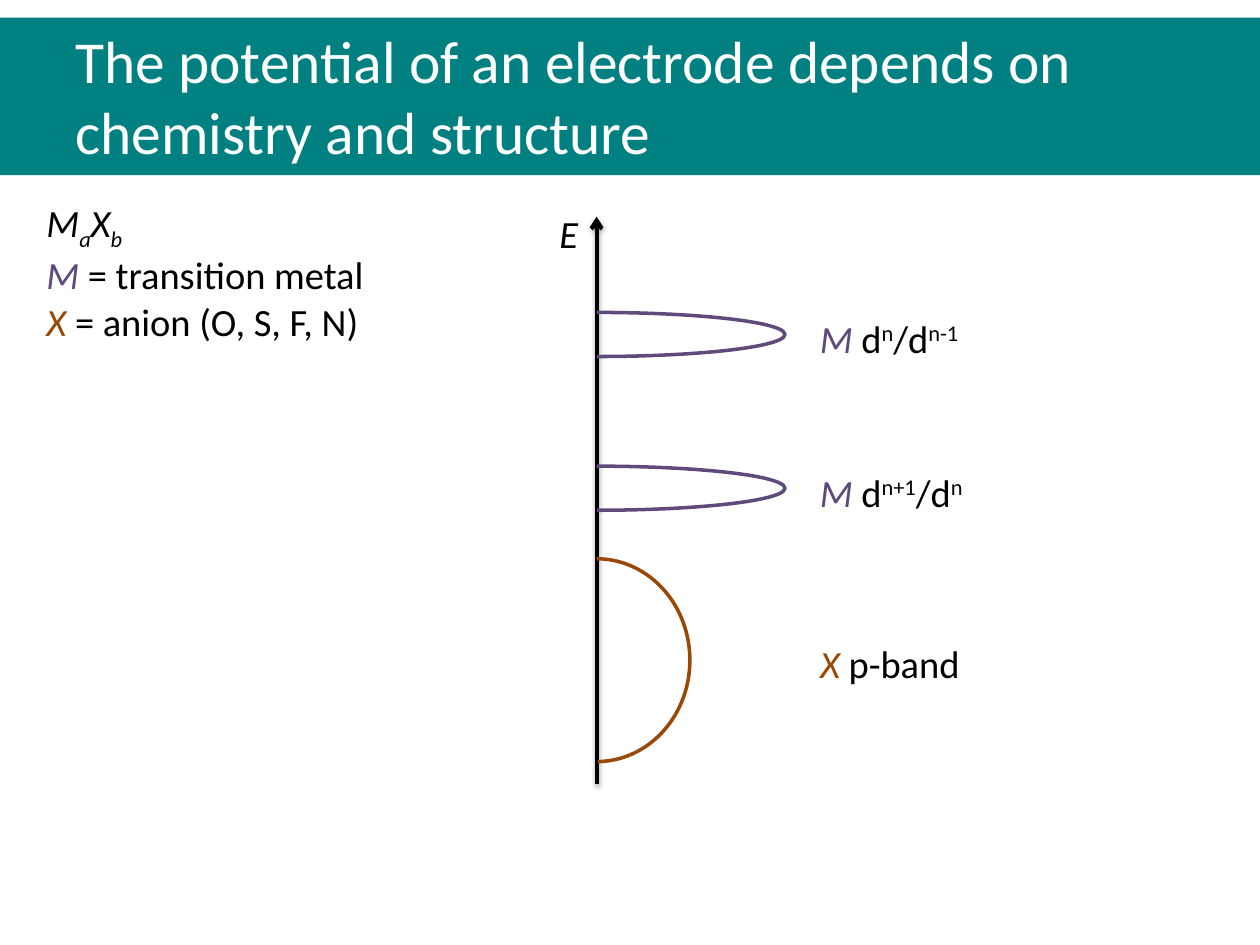
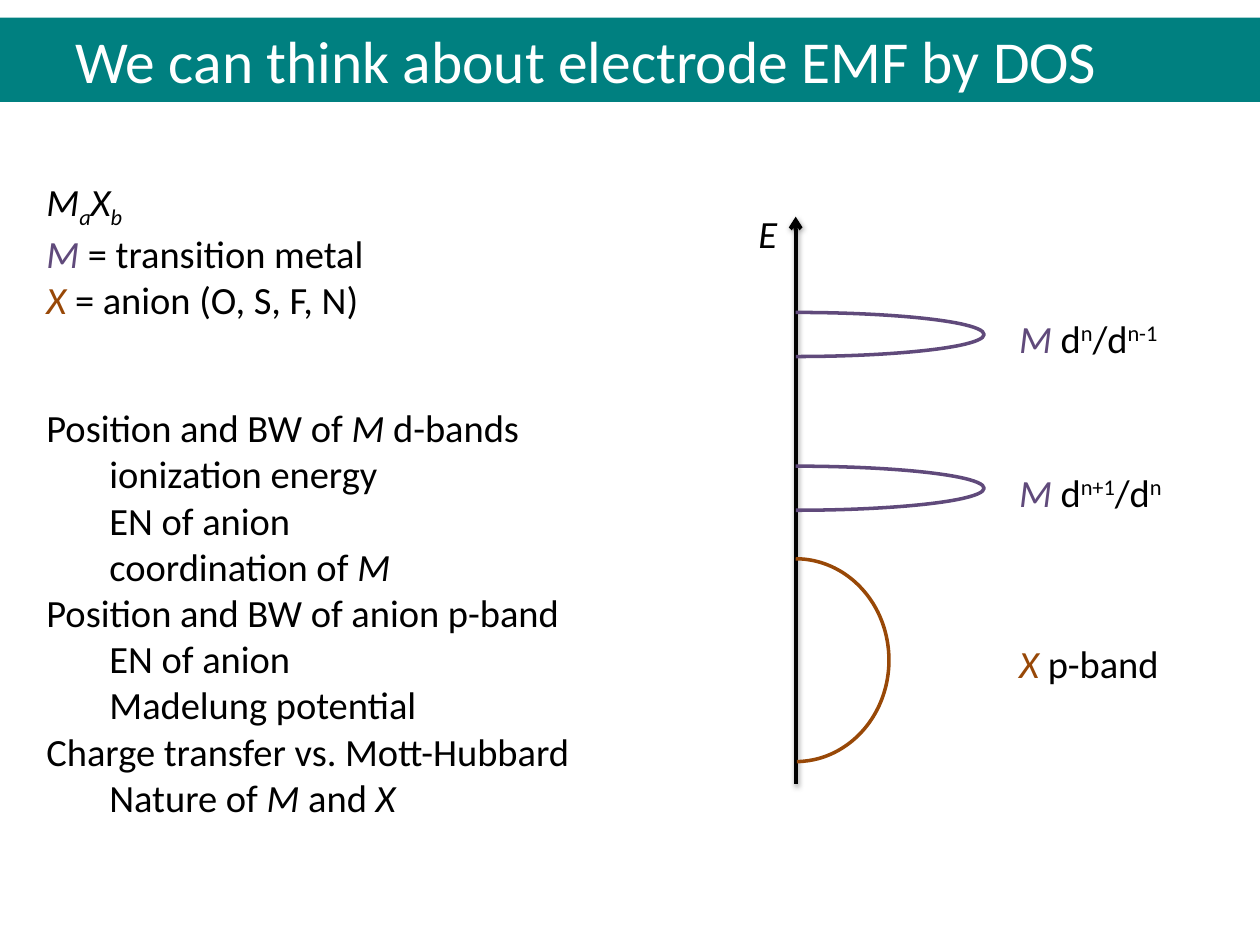
from dataclasses import dataclass

import pptx
import pptx.dml.color
import pptx.enum.shapes
import pptx.enum.text
import pptx.oxml
import pptx.oxml.ns
import pptx.presentation
import pptx.shapes.autoshape
import pptx.slide
import pptx.text.text
import pptx.util

RGBColor = pptx.dml.color.RGBColor
TEAL = RGBColor(0x00, 0x80, 0x80)
WHITE = RGBColor(0xFF, 0xFF, 0xFF)
BLACK = RGBColor(0x00, 0x00, 0x00)
METAL_PURPLE = RGBColor(0x60, 0x4A, 0x7B)
ANION_BROWN = RGBColor(0x98, 0x48, 0x07)

FONT = "Calibri"
TITLE_SIZE = 34
BODY_SIZE = 22

# The slide is a grid of 100 columns by 75 rows; every length below is in cells.
SLIDE_WIDTH = pptx.util.Inches(10)
SLIDE_HEIGHT = pptx.util.Inches(7.5)
COLUMNS, ROWS = 100, 75
INDENT = 5
TITLE_TOP = 1.4
LINE_HEIGHT = 4.7
TEXT_LEFT = 2.7
AXIS_TOP, AXIS_BOTTOM = 17.2, 62.2
LABEL_OFFSET = 16.75
SEMICIRCLE_START = 108.37

AXIS_SHADOW = (
    f'<a:effectLst {pptx.oxml.ns.nsdecls("a")}>'
    '<a:outerShdw blurRad="40000" dist="20000" dir="5400000" rotWithShape="0">'
    '<a:srgbClr val="000000"><a:alpha val="38000"/></a:srgbClr>'
    "</a:outerShdw></a:effectLst>"
)
ARROW_HEAD = f'<a:headEnd {pptx.oxml.ns.nsdecls("a")} type="arrow"/>'


@dataclass(frozen=True)
class Run:
    text: str
    colour: RGBColor = BLACK
    italic: bool = False
    baseline: int = 0


@dataclass(frozen=True)
class Line:
    runs: tuple[Run, ...]
    indented: bool = False


@dataclass(frozen=True)
class Band:
    middle: float
    thickness: float
    reach: float
    colour: RGBColor
    label: Line
    label_top: float
    label_width: float


def symbol(text: str, colour: RGBColor = BLACK) -> Run:
    return Run(text, colour, italic=True)


def subscript(text: str) -> Run:
    return Run(text, italic=True, baseline=-25)


def superscript(text: str) -> Run:
    return Run(text, baseline=30)


def plain(text: str, indented: bool = False) -> Line:
    return Line((Run(text),), indented)


def metal_label(first: str, second: str) -> Line:
    return Line((symbol("M", METAL_PURPLE), Run(" d"), superscript(first),
                 Run("/d"), superscript(second)))


METAL, ANION = symbol("M", METAL_PURPLE), symbol("X", ANION_BROWN)

BANDS = (
    Band(52.4, 16.1, 7.4, ANION_BROWN, Line((ANION, Run(" p-band"))), 50.3, 13.2),
    Band(38.75, 3.5, 14.95, METAL_PURPLE, metal_label("n+1", "n"), 36.7, 14),
    Band(26.55, 3.5, 14.95, METAL_PURPLE, metal_label("n", "n-1"), 24.5, 13.6),
)

COMPOUND = (
    Line((symbol("M"), subscript("a"), symbol("X"), subscript("b"))),
    Line((METAL, Run(" = transition metal"))),
    Line((ANION, Run(" = anion (O, S, F, N)"))),
)

FACTORS = (
    Line((Run("Position and BW of "), symbol("M"), Run(" d-bands"))),
    plain("ionization energy", True),
    plain("EN of anion", True),
    Line((Run("coordination of "), symbol("M")), True),
    plain("Position and BW of anion p-band"),
    plain("EN of anion", True),
    plain("Madelung potential", True),
    plain("Charge transfer vs. Mott-Hubbard"),
    Line((Run("Nature of "), symbol("M"), Run(" and "), symbol("X")), True),
)


def across(columns: float) -> pptx.util.Emu:
    return pptx.util.Emu(round(SLIDE_WIDTH * columns / COLUMNS))


def down(rows: float) -> pptx.util.Emu:
    return pptx.util.Emu(round(SLIDE_HEIGHT * rows / ROWS))


def write_lines(frame: pptx.text.text.TextFrame, lines: tuple[Line, ...], size: int) -> None:
    frame.auto_size = pptx.enum.text.MSO_AUTO_SIZE.SHAPE_TO_FIT_TEXT
    for index, line in enumerate(lines):
        paragraph = frame.add_paragraph() if index else frame.paragraphs[0]
        paragraph.alignment = pptx.enum.text.PP_ALIGN.LEFT
        if line.indented:
            properties = paragraph._p.get_or_add_pPr()
            properties.set("marL", str(across(INDENT)))
            properties.set("indent", "0")
        for part in line.runs:
            run = paragraph.add_run()
            run.text = part.text
            run.font.name = FONT
            run.font.size = pptx.util.Pt(size)
            run.font.italic = part.italic
            run.font.color.rgb = part.colour
            if part.baseline:
                run.font._element.set("baseline", str(part.baseline * 1000))


def add_text(slide: pptx.slide.Slide, lines: tuple[Line, ...], left: float, top: float,
             width: float, height: float = LINE_HEIGHT) -> None:
    box = slide.shapes.add_textbox(across(left), down(top), across(width), down(height))
    box.text_frame.word_wrap = False
    write_lines(box.text_frame, lines, BODY_SIZE)


def add_title(slide: pptx.slide.Slide, title: str, height: float) -> None:
    bar = slide.shapes.add_shape(pptx.enum.shapes.MSO_SHAPE.RECTANGLE, 0, down(TITLE_TOP),
                                 SLIDE_WIDTH, down(height))
    bar.shadow.inherit = False
    bar.fill.solid()
    bar.fill.fore_color.rgb = TEAL
    bar.line.fill.background()
    bar.text_frame.word_wrap = True
    bar.text_frame.vertical_anchor = pptx.enum.text.MSO_ANCHOR.TOP
    write_lines(bar.text_frame, (Line((Run(title, WHITE),), True),), TITLE_SIZE)


def add_energy_axis(slide: pptx.slide.Slide, axis: float) -> None:
    arrow = slide.shapes.add_connector(pptx.enum.shapes.MSO_CONNECTOR.STRAIGHT,
                                       across(axis), down(AXIS_TOP),
                                       across(axis), down(AXIS_BOTTOM))
    arrow.line.color.rgb = BLACK
    arrow.line.width = pptx.util.Pt(2.25)
    arrow.line._get_or_add_ln().append(pptx.oxml.parse_xml(ARROW_HEAD))
    arrow._element.spPr.append(pptx.oxml.parse_xml(AXIS_SHADOW))
    add_text(slide, (Line((symbol("E"),)),), axis - 3.95, 16.2, 3.5)


def add_band(slide: pptx.slide.Slide, axis: float, band: Band) -> None:
    """Draw a half ellipse opening onto the axis, with its label to the right."""
    arc = slide.shapes.add_shape(pptx.enum.shapes.MSO_SHAPE.ARC,
                                 across(axis - band.thickness / 2),
                                 down(band.middle - band.reach),
                                 across(band.thickness), down(2 * band.reach))
    arc.adjustments[0] = SEMICIRCLE_START
    arc.adjustments[1] = 0
    arc.rotation = 270
    arc._element.spPr.xfrm.set("flipV", "1")
    arc.shadow.inherit = False
    arc.fill.background()
    arc.line.color.rgb = band.colour
    arc.line.width = pptx.util.Pt(2)
    add_text(slide, (band.label,), axis + LABEL_OFFSET, band.label_top, band.label_width)


def add_band_slide(presentation: pptx.presentation.Presentation, title: str,
                   title_height: float, axis: float, compound_top: float) -> pptx.slide.Slide:
    slide = presentation.slides.add_slide(presentation.slide_layouts[6])
    add_title(slide, title, title_height)
    add_energy_axis(slide, axis)
    for band in BANDS:
        add_band(slide, axis, band)
    add_text(slide, COMPOUND, TEXT_LEFT, compound_top, 27.5, 12.1)
    return slide


def main() -> None:
    presentation = pptx.Presentation()
    presentation.slide_width = SLIDE_WIDTH
    presentation.slide_height = SLIDE_HEIGHT
    add_band_slide(presentation,
                   "The potential of an electrode depends on chemistry and structure",
                   title_height=12.5, axis=47.35, compound_top=15.3)
    emf_slide = add_band_slide(presentation, "We can think about electrode EMF by DOS",
                               title_height=6.7, axis=63.15, compound_top=13.6)
    add_text(emf_slide, FACTORS, TEXT_LEFT, 31.6, 44.1, 34.3)
    presentation.save("out.pptx")


if __name__ == "__main__":
    main()
